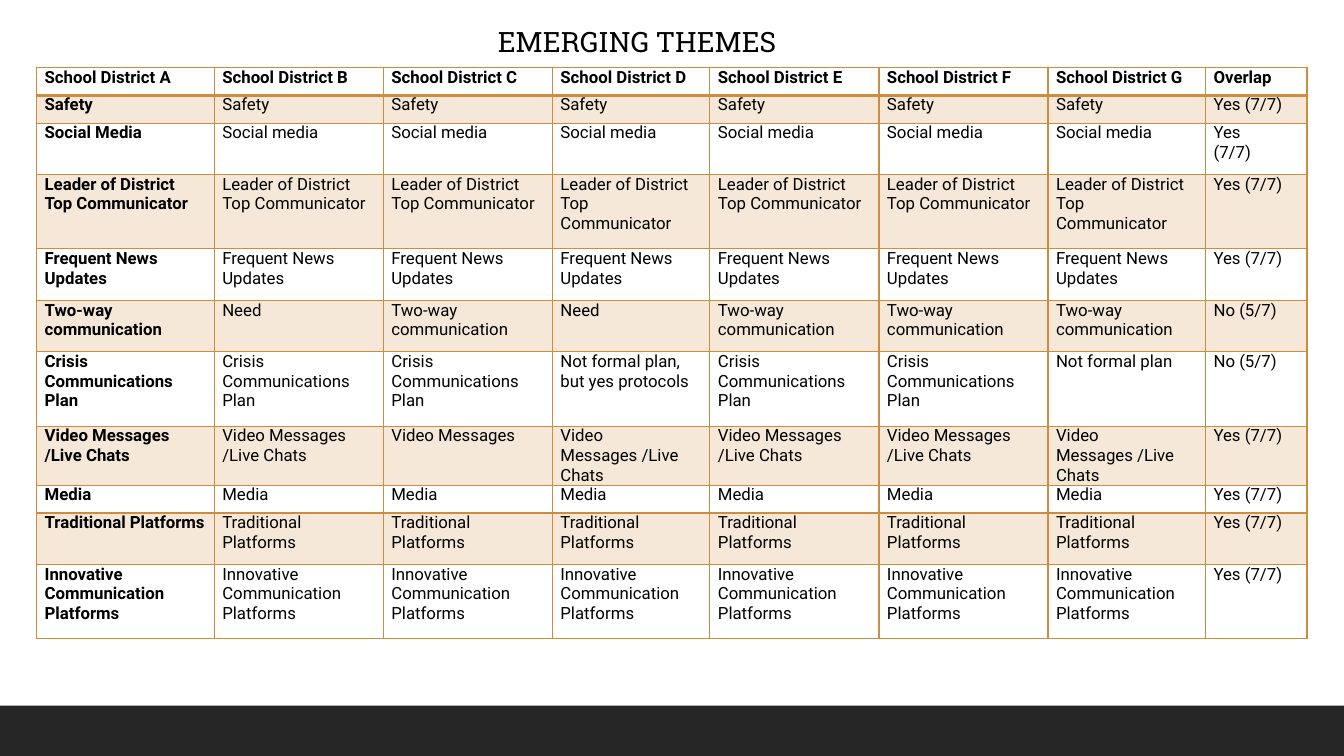
from dataclasses import dataclass, field

from lxml.etree import SubElement as Sub
from pptx import Presentation as Deck
from pptx.dml.color import RGBColor as Rgb
from pptx.enum.shapes import MSO_SHAPE as Kind
from pptx.oxml.ns import qn
from pptx.slide import Slide
from pptx.table import _Cell as Cell
from pptx.text.text import TextFrame as Frame
from pptx.util import Emu, Inches, Pt

HUES = {"ink": "000000", "bar": "262626", "gold": "CE8D3E"}
WIDE, HIGH = Inches(13.33), Inches(7.5)
COLS = [13.22, 12.58, 12.58, 11.72, 12.58, 12.58, 11.72, 7.56]
LOW, MID, TALL = 3.68, 6.81, 9.83
SIDES = ["L", "R", "T", "B"]
TINT = 20


@dataclass
class Theme:
    name: str
    tall: float
    score: str = "Yes (7/7)"
    rest: str = ""
    odd: dict[int, str] = field(default_factory=dict)

    def words(self) -> list[str]:
        mids = [self.odd.get(col, self.rest or self.name) for col in range(1, 7)]
        return [self.name, *mids, self.score]


THEMES = [
    Theme("School District A", LOW, "Overlap",
          odd={col: f"School District {mark}" for col, mark in enumerate("BCDEFG", 1)}),
    Theme("Safety", LOW),
    Theme("Social Media", MID, "Yes\n(7/7)", rest="Social media"),
    Theme("Leader of District Top Communicator", TALL),
    Theme("Frequent News Updates", MID),
    Theme("Two-way communication", MID, "No (5/7)", odd={1: "Need", 3: "Need"}),
    Theme("Crisis Communications Plan", TALL, "No (5/7)",
          odd={3: "Not formal plan, but yes protocols", 6: "Not formal plan"}),
    Theme("Video Messages /Live Chats", MID, odd={2: "Video Messages"}),
    Theme("Media", LOW),
    Theme("Traditional Platforms", MID),
    Theme("Innovative Communication Platforms", TALL),
]


def across(share: float) -> Emu:
    return Emu(round(WIDE * share / 100))


def down(share: float) -> Emu:
    return Emu(round(HIGH * share / 100))


def write(frame: Frame, words: str, face: str, size: float, bold: bool = False) -> None:
    frame.word_wrap = True
    for spot, line in enumerate(words.split("\n")):
        para = frame.add_paragraph() if spot else frame.paragraphs[0]
        run = para.add_run()
        run.text = line
        run.font.name = face
        run.font.size = Pt(size)
        run.font.bold = bold
        run.font.color.rgb = Rgb.from_string(HUES["ink"])


def paint(cell: Cell, band: bool) -> None:
    if not band:
        cell.fill.background()
        return
    cell.fill.solid()
    cell.fill.fore_color.rgb = Rgb.from_string(HUES["gold"])
    tone = cell._tc.tcPr.find(f".//{qn('a:srgbClr')}")
    Sub(tone, qn("a:alpha"), val=str(TINT * 1000))


def edge(cell: Cell, head: bool) -> None:
    props = cell._tc.get_or_add_tcPr()
    for spot, side in enumerate(SIDES):
        thick = 2 if head and side == "B" else 1
        line = Sub(props, qn(f"a:ln{side}"), w=str(Pt(thick)))
        fill = Sub(line, qn("a:solidFill"))
        Sub(fill, qn("a:srgbClr"), val=HUES["gold"])
        props.insert(spot, line)


def draw_grid(slide: Slide) -> None:
    box = slide.shapes.add_table(
        len(THEMES), len(COLS), across(2.72), down(8.93),
        across(sum(COLS)), down(sum(theme.tall for theme in THEMES)))
    grid = box.table
    grid.first_row = grid.horz_banding = False
    for col, share in zip(grid.columns, COLS):
        col.width = across(share)
    for row, theme in enumerate(THEMES):
        grid.rows[row].height = down(theme.tall)
        for col, words in enumerate(theme.words()):
            cell = grid.cell(row, col)
            cell.margin_left = cell.margin_right = across(0.6)
            cell.margin_top = cell.margin_bottom = 0
            write(cell.text_frame, words, "Roboto", 12, row == 0 or col == 0)
            paint(cell, row % 2 == 1)
            edge(cell, row == 0)


def draw_bar(slide: Slide) -> None:
    bar = slide.shapes.add_shape(Kind.RECTANGLE, 0, down(93.33), WIDE, down(6.67))
    bar.shadow.inherit = False
    bar.fill.solid()
    bar.fill.fore_color.rgb = Rgb.from_string(HUES["bar"])
    bar.line.fill.background()


def draw_title(slide: Slide) -> None:
    box = slide.shapes.add_textbox(across(36.31), down(2.53), across(37.06), down(5.87))
    write(box.text_frame, "EMERGING THEMES", "Roboto Slab", 20)


def main() -> None:
    deck = Deck()
    deck.slide_width, deck.slide_height = WIDE, HIGH
    slide = deck.slides.add_slide(deck.slide_layouts[6])
    draw_bar(slide)
    draw_grid(slide)
    draw_title(slide)
    deck.save("out.pptx")


if __name__ == "__main__":
    main()
